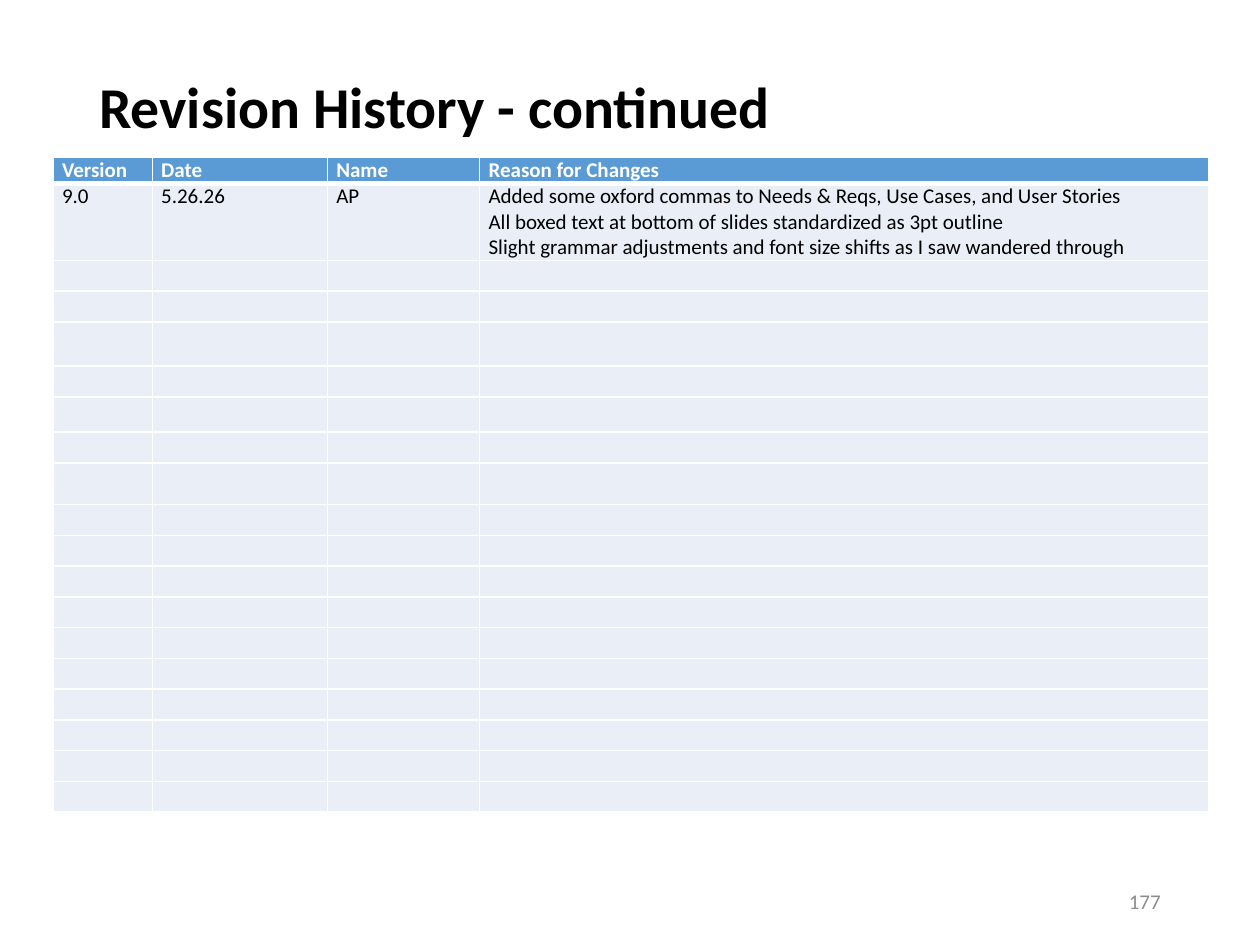
from dataclasses import dataclass

from lxml import etree
from pptx import Presentation
from pptx.dml.color import RGBColor
from pptx.enum.text import MSO_ANCHOR, PP_ALIGN
from pptx.oxml.ns import qn
from pptx.util import Cm, Pt

MIDDLE = MSO_ANCHOR.MIDDLE
LEFT = PP_ALIGN.LEFT
RIGHT = PP_ALIGN.RIGHT
FONT = "Calibri"
BLACK = "000000"
WHITE = "FFFFFF"
GREY = "8C8C8C"
HEADER_BLUE = "5B9BD5"
BODY_BLUE = "EAEFF7"
TABLE_SIZE = 12
EMPTY_HEIGHT = 0.62
COLUMN_WIDTHS = [2.0, 3.53, 3.07, 14.7]
ROW_HEIGHTS = [0.52, 1.55, EMPTY_HEIGHT, EMPTY_HEIGHT, 0.89, EMPTY_HEIGHT,
               0.71, EMPTY_HEIGHT, 0.84] + [EMPTY_HEIGHT] * 10
HEADINGS = ["Version", "Date", "Name", "Reason for Changes"]
REVISION = [
    "9.0",
    "5.26.26",
    "AP",
    "Added some oxford commas to Needs & Reqs, Use Cases, and User Stories\n"
    "All boxed text at bottom of slides standardized as 3pt outline\n"
    "Slight grammar adjustments and font size shifts as I saw wandered through",
]


@dataclass
class TextStyle:
    size: float
    color: str
    bold: bool = False


@dataclass
class Label:
    text: str
    left: float
    top: float
    width: float
    height: float
    style: TextStyle
    align: PP_ALIGN = LEFT
    line_spacing: float = 1.0
    bottom_inset: float = 0.13


@dataclass
class RowStyle:
    text: TextStyle
    fill: str
    top_border: float = 1
    bottom_border: float = 1


HEADER_STYLE = RowStyle(TextStyle(TABLE_SIZE, WHITE, True), HEADER_BLUE, bottom_border=3)
FIRST_STYLE = RowStyle(TextStyle(TABLE_SIZE, BLACK), BODY_BLUE, top_border=3)
BODY_STYLE = RowStyle(TextStyle(TABLE_SIZE, BLACK), BODY_BLUE)

LABELS = [
    Label("Revision History - continued", 1.75, 1.02, 21.9, 3.68,
          TextStyle(33, BLACK, True), line_spacing=0.9, bottom_inset=1.42),
    Label("177", 17.93, 17.65, 5.72, 1.02, TextStyle(12, GREY), RIGHT),
]


def rgb(value: str) -> RGBColor:
    return RGBColor.from_string(value)


def format_spans(paragraph, style: TextStyle) -> None:
    for span in paragraph.runs:
        span.font.name = FONT
        span.font.size = Pt(style.size)
        span.font.bold = style.bold
        span.font.color.rgb = rgb(style.color)


def add_label(page, label: Label) -> None:
    box = page.shapes.add_textbox(
        Cm(label.left), Cm(label.top), Cm(label.width), Cm(label.height))
    frame = box.text_frame
    frame.word_wrap = True
    frame.vertical_anchor = MIDDLE
    frame.margin_bottom = Cm(label.bottom_inset)
    frame.text = label.text
    para = frame.paragraphs[0]
    para.alignment = label.align
    para.line_spacing = label.line_spacing
    format_spans(para, label.style)


def add_border(cell, side: str, width: float) -> None:
    properties = cell._tc.get_or_add_tcPr()
    line = etree.SubElement(properties, qn(f"a:{side}"), w=str(Pt(width)))
    fill = etree.SubElement(line, qn("a:solidFill"))
    etree.SubElement(fill, qn("a:srgbClr"), val=WHITE)


def fill_cell(cell, text: str, style: RowStyle) -> None:
    cell.margin_left = cell.margin_right = Cm(0.18)
    cell.margin_top = cell.margin_bottom = 0
    borders = {"lnL": 1, "lnR": 1, "lnT": style.top_border, "lnB": style.bottom_border}
    for side, width in borders.items():
        add_border(cell, side, width)
    cell.fill.solid()
    cell.fill.fore_color.rgb = rgb(style.fill)
    if text:
        cell.text_frame.text = text
    for para in cell.text_frame.paragraphs:
        format_spans(para, style.text)
        if not para.runs:
            etree.SubElement(para._p, qn("a:endParaRPr"), sz=str(style.text.size * 100))


def add_revision_table(page) -> None:
    frame = page.shapes.add_table(
        len(ROW_HEIGHTS), len(COLUMN_WIDTHS), Cm(1.07), Cm(3.18),
        Cm(sum(COLUMN_WIDTHS)), Cm(sum(ROW_HEIGHTS)))
    table = frame.table
    for column, width in zip(table.columns, COLUMN_WIDTHS):
        column.width = Cm(width)
    empty_count = len(ROW_HEIGHTS) - 2
    contents = [HEADINGS, REVISION] + [[""] * len(HEADINGS)] * empty_count
    styles = [HEADER_STYLE, FIRST_STYLE] + [BODY_STYLE] * empty_count
    for row, height, texts, style in zip(table.rows, ROW_HEIGHTS, contents, styles):
        row.height = Cm(height)
        for cell, text in zip(row.cells, texts):
            fill_cell(cell, text, style)


def main() -> None:
    deck = Presentation()
    deck.slide_width = Cm(25.4)
    deck.slide_height = Cm(19.05)
    page = deck.slides.add_slide(deck.slide_layouts[6])
    title, page_number = LABELS
    add_label(page, title)
    add_revision_table(page)
    add_label(page, page_number)
    deck.save("out.pptx")


if __name__ == "__main__":
    main()
